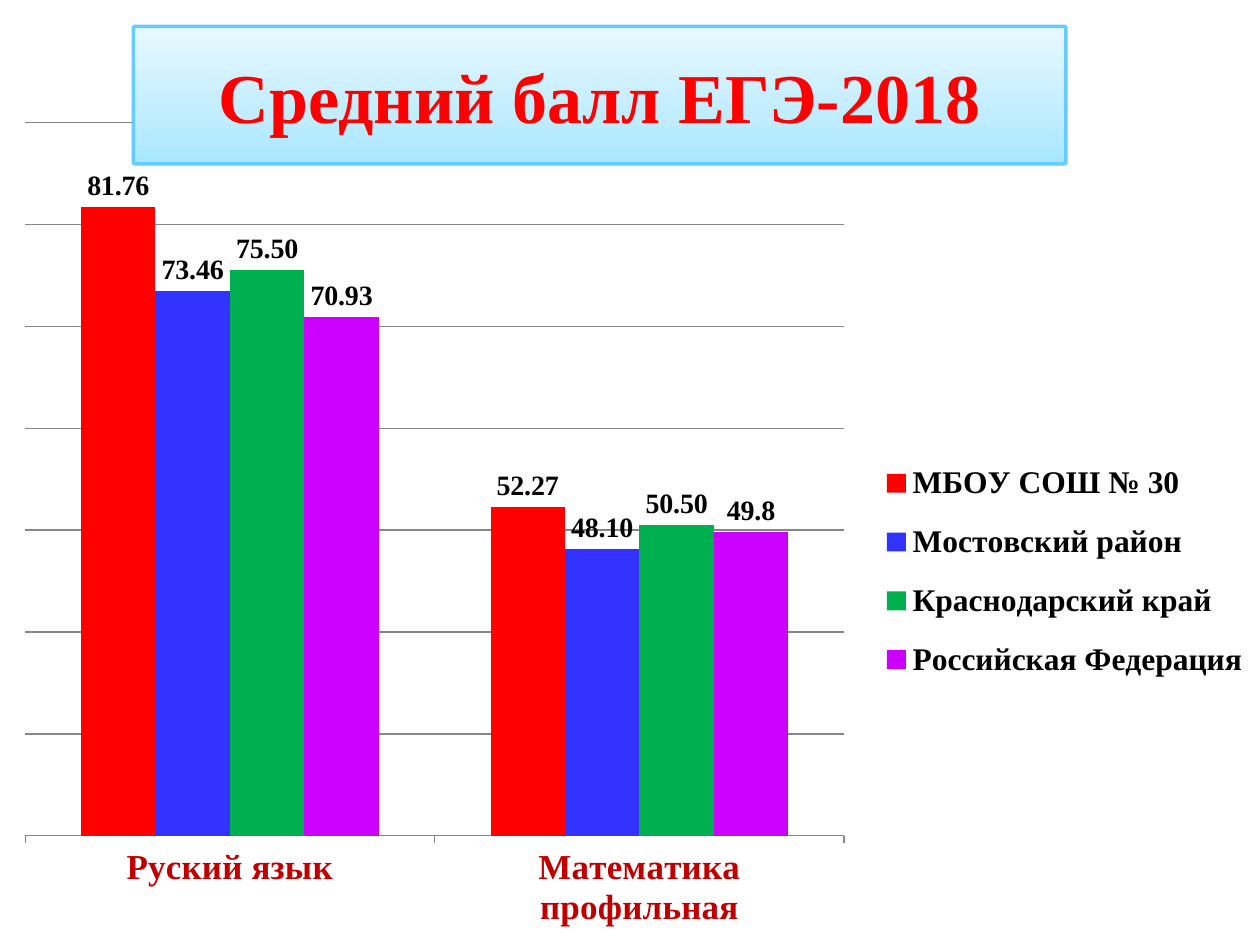
from copy import deepcopy
from lxml.etree import SubElement
from pptx import Presentation
from pptx.chart.data import CategoryChartData as Data
from pptx.dml.color import RGBColor
from pptx.enum.chart import XL_CHART_TYPE as Chart, XL_LABEL_POSITION as Place
from pptx.enum.chart import XL_LEGEND_POSITION as Side, XL_TICK_MARK as Tick
from pptx.enum.chart import XL_TICK_LABEL_POSITION as Tags
from pptx.enum.shapes import MSO_SHAPE as Shape
from pptx.enum.text import MSO_ANCHOR as Anchor, PP_ALIGN as Align
from pptx.oxml.ns import qn
from pptx.util import Inches, Pt

FONT = "Times New Roman"
CATS = ["Руский язык", "Математика профильная"]
SERIES = [
    ("МБОУ СОШ № 30", (81.76, 52.27), "FF0000", "0.00"),
    ("Мостовский район", (73.46, 48.1), "3333FF", "0.00"),
    ("Краснодарский край", (75.5, 50.5), "00B050", "0.00"),
    ("Российская Федерация", (70.93, 49.8), "CC00FF", "General"),
]


def rgb(code):
    """Turn a hex string into a colour."""
    return RGBColor.from_string(code)


def style(font, size, color="000000"):
    """Set a bold serif font."""
    font.name, font.size, font.bold = FONT, Pt(size), True
    font.color.rgb = rgb(color)


def rule(line, color, width):
    """Set the colour and width of a line."""
    line.color.rgb = rgb(color)
    line.width = Pt(width)


def layout(node, index, box, inner=False):
    """Place a chart part by fractions of the chart area."""
    for old in node.findall(qn("c:layout")):
        node.remove(old)
    outer = node.makeelement(qn("c:layout"))
    node.insert(index, outer)
    manual = SubElement(outer, qn("c:manualLayout"))
    pairs = [("layoutTarget", "inner")] if inner else []
    pairs += [("xMode", "edge"), ("yMode", "edge")]
    pairs += zip("xywh", box)
    for name, value in pairs:
        SubElement(manual, qn("c:" + name)).set("val", str(value))


def set_axes(chart):
    """Format both axes and the grid."""
    cat, val = chart.category_axis, chart.value_axis
    style(cat.tick_labels.font, 20, "C00000")
    cat.major_tick_mark = Tick.OUTSIDE
    cat.tick_label_position = Tags.LOW
    rule(cat.format.line, "868686", 0.75)
    val.visible = False
    val.minimum_scale, val.maximum_scale, val.major_unit = 20, 90, 10
    val.has_major_gridlines = True
    rule(val.major_gridlines.format.line, "868686", 0.75)


def add_chart(slide):
    """Add the column chart of mean scores."""
    data = Data()
    data.categories = CATS
    for name, vals, _, form in SERIES:
        data.add_series(name, vals, form)
    box = [Inches(n) for n in (0, 0.84, 10, 6.66)]
    chart = slide.shapes.add_chart(Chart.COLUMN_CLUSTERED, *box, data).chart
    chart.has_title = False
    chart.font.name, chart.font.size = "Calibri", Pt(10)
    chart.font.color.rgb = rgb("000000")
    set_axes(chart)
    plot = chart.plots[0]
    plot.gap_width, plot.overlap, plot.vary_by_categories = 150, 0, False
    for bars, (_, _, color, form) in zip(plot.series, SERIES):
        bars.format.fill.solid()
        bars.format.fill.fore_color.rgb = rgb(color)
        tags = bars.data_labels
        tags.show_value, tags.position = True, Place.OUTSIDE_END
        tags.number_format, tags.number_format_is_linked = form, False
        style(tags.font, 16)
    chart.has_legend = True
    key = chart.legend
    key.position, key.include_in_layout = Side.RIGHT, False
    style(key.font, 18)
    area = chart.element.find(".//" + qn("c:plotArea"))
    layout(area, 0, (0.02, 0.02, 0.65, 0.85), True)
    layout(chart.element.find(".//" + qn("c:legend")), 1, (0.7, 0.4, 0.29, 0.31))


def add_title(slide):
    """Add the title on its gradient panel."""
    box = [Inches(n) for n in (1.06, 0.21, 7.4, 1.09)]
    panel = slide.shapes.add_shape(Shape.ROUNDED_RECTANGLE, *box)
    panel.shadow.inherit = False
    panel.adjustments[0] = 0.01
    fill = panel.fill
    fill.gradient()
    fill.gradient_angle = 90
    stops = panel.element.find(".//" + qn("a:gsLst"))
    stops.insert(1, deepcopy(stops[0]))
    shades = [(0, "A7E6FF"), (0.35, "C1EDFF"), (1, "E7F8FF")]
    for stop, (at, color) in zip(fill.gradient_stops, shades):
        stop.position, stop.color.rgb = at, rgb(color)
    rule(panel.line, "66CCFF", 2)
    frame = panel.text_frame
    frame.text = "Средний балл ЕГЭ-2018"
    frame.word_wrap, frame.vertical_anchor = True, Anchor.MIDDLE
    par = frame.paragraphs[0]
    par.alignment = Align.CENTER
    style(par.runs[0].font, 40, "FF0000")


def main():
    """Build and save the slide."""
    deck = Presentation()
    deck.slide_width, deck.slide_height = Inches(10), Inches(7.5)
    slide = deck.slides.add_slide(deck.slide_layouts[6])
    add_chart(slide)
    add_title(slide)
    deck.save("out.pptx")


if __name__ == "__main__":
    main()
